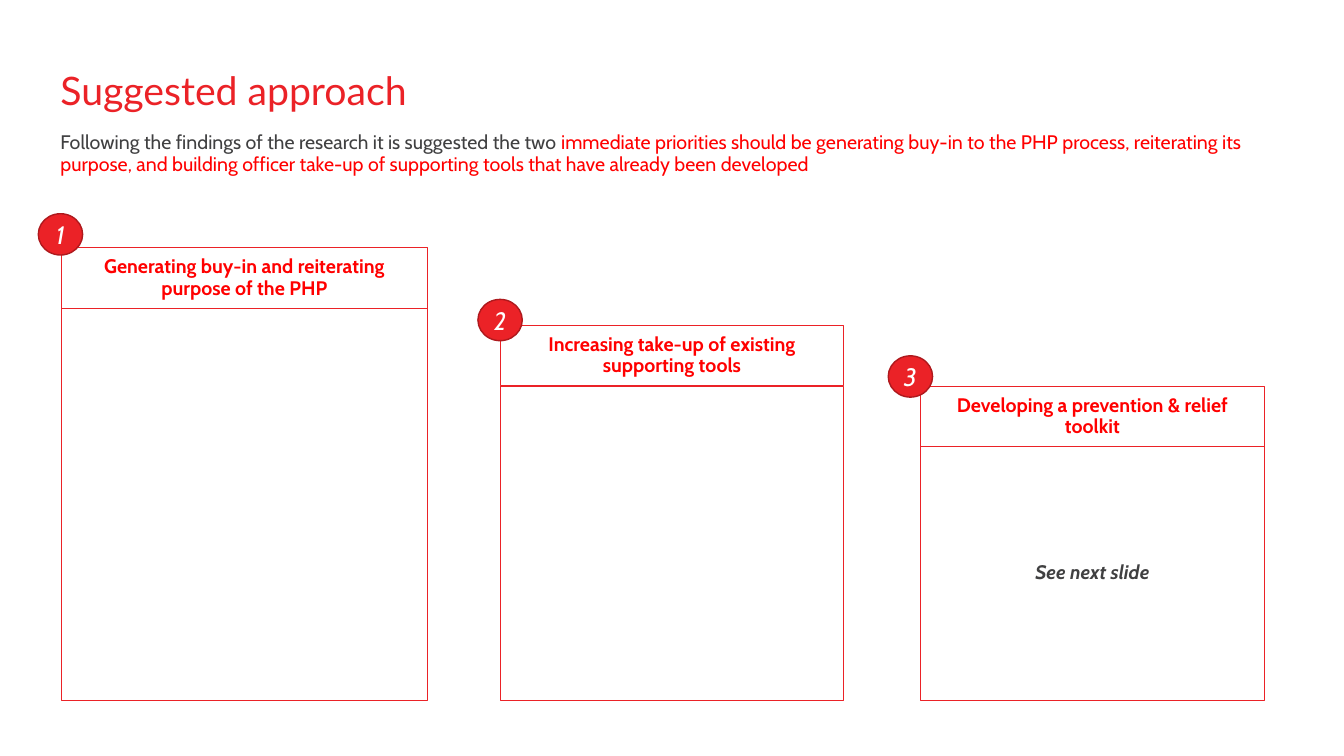
import pptx
import pptx.util
import pptx.dml.color
import pptx.enum.shapes
import pptx.enum.text

SHAPE = pptx.enum.shapes.MSO_SHAPE
ALIGN = pptx.enum.text.PP_ALIGN
ANCHOR = pptx.enum.text.MSO_ANCHOR
COLORS = {
    "brand": "EB2227",
    "edge": "AE191D",
    "red": "FF0000",
    "dark": "404041",
    "white": "FFFFFF",
}


class Deck:
    SCALE = 9144  # EMU per px, 100 px to the inch
    FONT = "Cabin"

    def __init__(self, width, height):
        self.prs = pptx.Presentation()
        self.prs.slide_width, self.prs.slide_height = self.emu(width, height)
        self.slide = self.prs.slides.add_slide(self.prs.slide_layouts[5])

    def emu(self, *sizes):
        return [pptx.util.Emu(size * self.SCALE) for size in sizes]

    def color(self, name):
        return pptx.dml.color.RGBColor.from_string(COLORS[name])

    def fill_text(self, shape, runs, size=14, font=FONT, align=ALIGN.CENTER,
                  anchor=ANCHOR.MIDDLE, lead=0.9, before=5, after=12):
        """Each run is (text, color, bold, italic)."""
        frame = shape.text_frame
        frame.word_wrap = True
        frame.auto_size = pptx.enum.text.MSO_AUTO_SIZE.NONE
        frame.vertical_anchor = anchor
        para = frame.paragraphs[0]
        para.alignment = align
        para.line_spacing = lead
        para.space_before = pptx.util.Pt(before)
        para.space_after = pptx.util.Pt(after)
        for text, color, bold, italic in runs:
            run = para.add_run()
            run.text = text
            run.font.name = font
            run.font.size = pptx.util.Pt(size)
            run.font.bold, run.font.italic = bold, italic
            run.font.color.rgb = self.color(color)

    def title(self, text, box):
        shape = self.slide.shapes.title
        shape.left, shape.top, shape.width, shape.height = self.emu(*box)
        self.fill_text(shape, [(text, "brand", False, False)], 28, "Lato",
                       ALIGN.LEFT, ANCHOR.TOP, before=10, after=0)

    def text(self, runs, box):
        shape = self.slide.shapes.add_textbox(*self.emu(*box))
        self.fill_text(shape, runs, align=ALIGN.LEFT, anchor=ANCHOR.TOP)

    def shape(self, kind, box, line, weight, fill=None):
        shape = self.slide.shapes.add_shape(kind, *self.emu(*box))
        shape.shadow.inherit = False
        if fill:
            shape.fill.solid()
            shape.fill.fore_color.rgb = self.color(fill)
        else:
            shape.fill.background()
        shape.line.color.rgb = self.color(line)
        shape.line.width = pptx.util.Pt(weight)
        return shape

    def panel(self, box, runs=()):
        shape = self.shape(SHAPE.RECTANGLE, box, "brand", 0.75)
        if runs:
            self.fill_text(shape, runs)

    def badge(self, label, left, top):
        shape = self.shape(SHAPE.OVAL, (left, top, 44, 41), "edge", 1, "brand")
        frame = shape.text_frame
        frame.margin_left = frame.margin_right = 0
        frame.margin_top = frame.margin_bottom = 0
        self.fill_text(shape, [(label, "white", False, True)], 18,
                       lead=1, before=0, after=0)

    def card(self, label, head, left, top, width, spot, body):
        panel_top = top + HEAD
        self.panel((left, top, width, HEAD), [(head, "red", True, False)])
        self.panel((left, panel_top, width, BASE - panel_top), body)
        self.badge(label, *spot)


HEAD = 60   # height of a card heading
BASE = 695  # shared bottom edge of the cards


def main():
    deck = Deck(1333, 750)

    # Title and lead text
    deck.title("Suggested approach", (50, 66, 1269, 61))
    deck.text([
        ("Following the findings of the research it is suggested the two",
         "dark", False, False),
        (" immediate priorities should be generating buy-in to the PHP "
         "process, reiterating its purpose, and building officer take-up of "
         "supporting tools that have already been developed",
         "red", False, False),
    ], (50, 127, 1229, 92))

    # Numbered cards: heading, left, top, width, badge corner, body runs
    cards = [
        ("Generating buy-in and reiterating purpose of the PHP",
         61, 246, 363, (38, 212), ()),
        ("Increasing take-up of existing supporting tools",
         496, 323, 341, (474, 297), ()),
        ("Developing a prevention & relief toolkit",
         913, 383, 341, (881, 353),
         [("See next slide", "dark", True, True)]),
    ]
    for number, card in enumerate(cards, 1):
        deck.card(str(number), *card)

    deck.prs.save("out.pptx")


if __name__ == "__main__":
    main()
